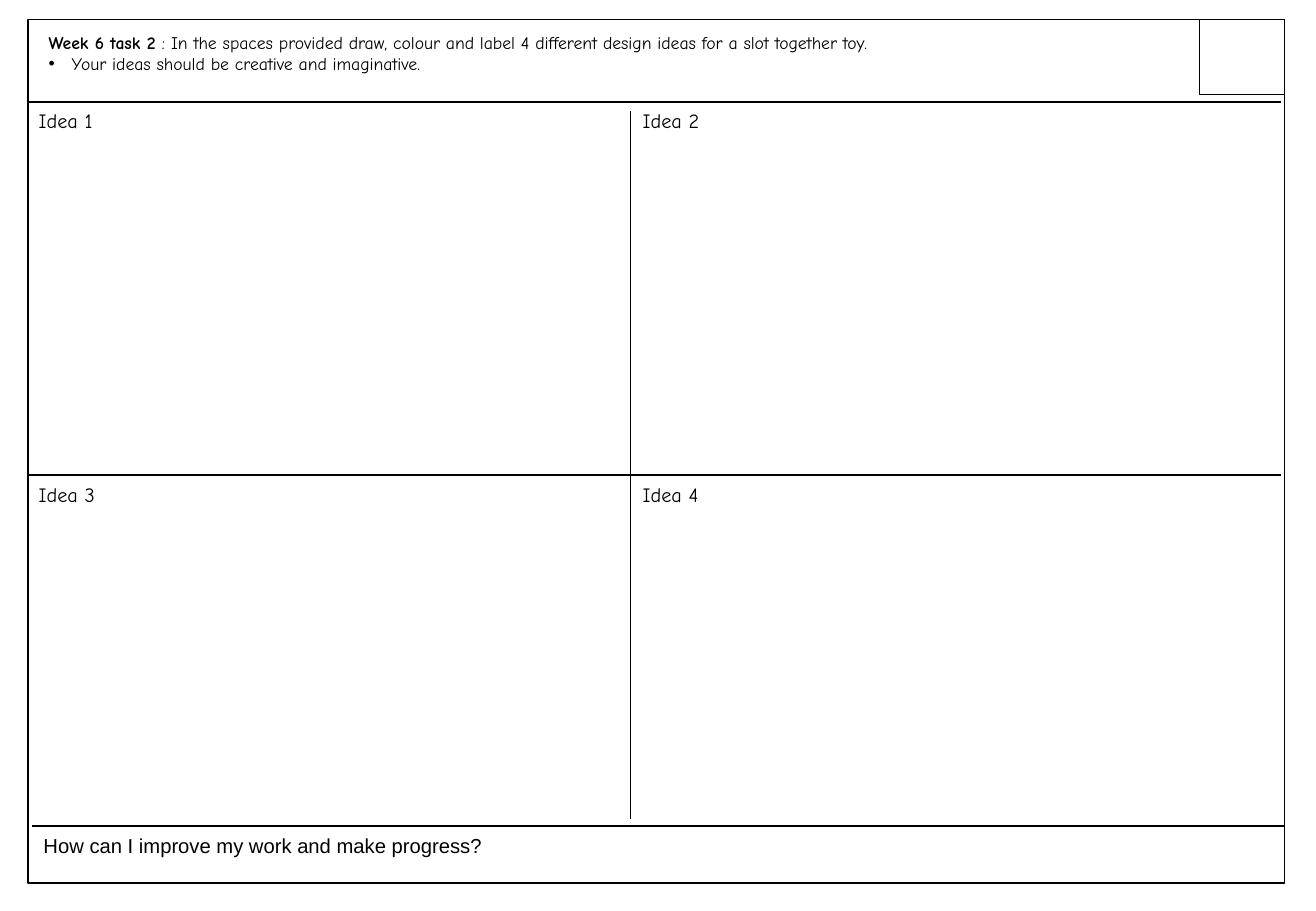
from lxml.etree import SubElement
from pptx import Presentation
from pptx.dml.color import RGBColor
from pptx.enum.shapes import MSO_CONNECTOR as CONNECTOR, MSO_SHAPE as SHAPE
from pptx.enum.text import MSO_ANCHOR as ANCHOR, MSO_AUTO_SIZE as AUTO, PP_ALIGN as ALIGN
from pptx.oxml.ns import qn
from pptx.util import Inches, Pt

COLOURS = {"ink": "000000"}
INK = RGBColor.from_string(COLOURS["ink"])
HAND, PLAIN = "Comic Neue", "Arial"
LINE_WIDTH = Pt(0.75)
IDEA_COLUMNS = IDEA_ROWS = 2


def inches(*lengths):
    return [Inches(length) for length in lengths]


def draw_rule(slide, x1, y1, x2, y2):
    rule = slide.shapes.add_connector(CONNECTOR.STRAIGHT, *inches(x1, y1, x2, y2))
    rule.line.color.rgb = INK
    rule.line.width = LINE_WIDTH
    SubElement(rule._element.spPr, qn("a:effectLst"))


def draw_frame(slide, box):
    frame = slide.shapes.add_shape(SHAPE.RECTANGLE, *inches(*box))
    frame.shadow.inherit = False
    frame.fill.background()
    frame.line.color.rgb = INK
    frame.line.width = LINE_WIDTH


def prepare_text(holder):
    text = holder.text_frame
    text.word_wrap = True
    text.auto_size = AUTO.NONE
    text.vertical_anchor = ANCHOR.TOP
    return text


def add_run(paragraph, words, size, font=HAND, bold=False):
    run = paragraph.add_run()
    run.text = words
    run.font.name = font
    run.font.size = Pt(size)
    run.font.bold = bold
    run.font.color.rgb = INK


def add_label(slide, box, words, font=HAND, align=ALIGN.LEFT):
    label = prepare_text(slide.shapes.add_textbox(*inches(*box)))
    label.paragraphs[0].alignment = align
    add_run(label.paragraphs[0], words, 12, font)


def add_bullet(paragraph, indent):
    properties = paragraph._p.get_or_add_pPr()
    properties.set("marL", str(Inches(indent)))
    properties.set("indent", str(-Inches(indent)))
    SubElement(properties, qn("a:buFont"), typeface="Arial")
    SubElement(properties, qn("a:buChar"), char="•")


def build_task(slide, box):
    left, top, width, height = box
    # Task wording in the title placeholder
    title = slide.shapes.title
    title.left, title.top, title.width, title.height = inches(
        left + 0.07, top + 0.05, width + 0.19, height + 0.04)
    task = prepare_text(title)
    instruction, hint = task.paragraphs[0], task.add_paragraph()
    for paragraph in (instruction, hint):
        paragraph.alignment = ALIGN.JUSTIFY
    add_run(instruction, "Week 6 task 2 ", 10.5, bold=True)
    add_run(instruction, ": In the spaces provided draw, colour and label "
            "4 different design ideas for a slot together toy.", 10.5)
    add_bullet(hint, 0.19)
    add_run(hint, "Your ideas should be creative and imaginative.", 10.5)
    # Mark box in the corner
    draw_frame(slide, (left + width - 0.7, top, 0.7, 0.62))


def build_ideas(slide, box):
    left, top, width, height = box
    column, row = 4.97, height / IDEA_ROWS
    # Rule above each row, and one between the columns
    for i in range(IDEA_ROWS):
        draw_rule(slide, left, top + i * row, left + width, top + i * row)
    draw_rule(slide, left + column, top + 0.07, left + column, 6.74)
    # Idea labels
    for i in range(IDEA_ROWS * IDEA_COLUMNS):
        r, c = divmod(i, IDEA_COLUMNS)
        add_label(slide, (left + c * column, top + r * (row + 0.01), 1.41, 0.3),
                  f"Idea {i + 1}", align=ALIGN.JUSTIFY)


def build_progress(slide, box):
    left, top, width, height = box
    draw_rule(slide, left, top, left + width, top)
    add_label(slide, (left, top + 0.01, 5.47, 0.3),
              "How can I improve my work and make progress?", PLAIN)


def main():
    deck = Presentation()
    deck.slide_width, deck.slide_height = inches(10.83, 7.5)
    slide = deck.slides.add_slide(deck.slide_layouts[5])
    draw_frame(slide, (0.23, 0.16, 10.34, 7.11))
    build_task(slide, (0.23, 0.16, 10.34, 0.68))
    build_ideas(slide, (0.22, 0.84, 10.32, 6.14))
    build_progress(slide, (0.26, 6.8, 10.31, 0.47))
    deck.save("out.pptx")


if __name__ == "__main__":
    main()
